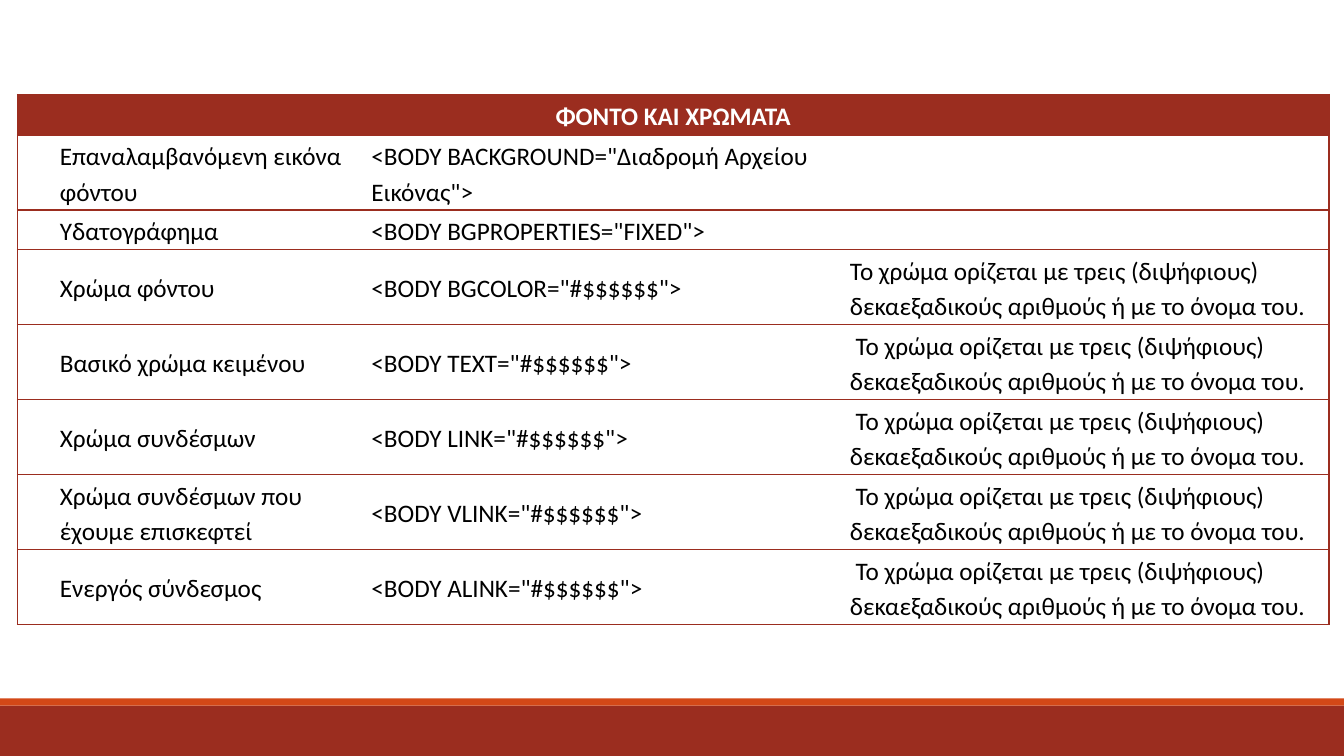
"""Build a slide with a table of HTML background and colour tags."""
from lxml import etree
from pptx import Presentation
from pptx.dml.color import RGBColor
from pptx.enum import shapes, text
from pptx.oxml import ns
from pptx.util import Cm, Pt

COLOURS = {"brick": "9B2D1F", "orange": "D34817", "white": "FFFFFF", "black": "000000"}
HEADING = "ΦΟΝΤΟ ΚΑΙ ΧΡΩΜΑΤΑ"
COLOUR_NOTE = "Το χρώμα ορίζεται με τρεις (διψήφιους) δεκαεξαδικούς αριθμούς ή με το όνομα του."
INDENTED_NOTE = " " + COLOUR_NOTE
TAGS = [
    ("Επαναλαμβανόμενη εικόνα φόντου", '<BODY BACKGROUND="Διαδρομή Αρχείου Εικόνας">', ""),
    ("Υδατογράφημα", '<BODY BGPROPERTIES="FIXED">', ""),
    ("Χρώμα φόντου", '<BODY BGCOLOR="#$$$$$$">', COLOUR_NOTE),
    ("Βασικό χρώμα κειμένου", '<BODY TEXT="#$$$$$$">', INDENTED_NOTE),
    ("Χρώμα συνδέσμων", '<BODY LINK="#$$$$$$">', INDENTED_NOTE),
    ("Χρώμα συνδέσμων που έχουμε επισκεφτεί", '<BODY VLINK="#$$$$$$">', INDENTED_NOTE),
    ("Ενεργός σύνδεσμος", '<BODY ALINK="#$$$$$$">', INDENTED_NOTE),
]
COLUMN_WIDTHS = [1.02, 7.85, 12.06, 12.12]
ROW_HEIGHTS = [1.02, 1.89, 0.99] + [1.89] * 5


def colour(name):
    return RGBColor.from_string(COLOURS[name])


def add_band(slide, top, width, height, fill):
    band = slide.shapes.add_shape(shapes.MSO_SHAPE.RECTANGLE, 0, Cm(top), width, Cm(height))
    band.shadow.inherit = False
    band.fill.solid()
    band.fill.fore_color.rgb = colour(fill)
    band.line.fill.background()


def set_borders(cell, visible):
    properties = cell._tc.get_or_add_tcPr()
    for position, side in enumerate("LRTB"):
        border = etree.Element(ns.qn(f"a:ln{side}"), w=str(Pt(1)))
        if side in visible:
            fill = etree.SubElement(border, ns.qn("a:solidFill"))
            etree.SubElement(fill, ns.qn("a:srgbClr"), val=COLOURS["brick"])
        else:
            etree.SubElement(border, ns.qn("a:noFill"))
        properties.insert(position, border)


def fill_cell(cell, wording, is_heading):
    cell.margin_left = cell.margin_right = Cm(0.05)
    cell.margin_top = cell.margin_bottom = Cm(0.05)
    cell.vertical_anchor = text.MSO_ANCHOR.MIDDLE
    if is_heading:
        cell.fill.solid()
        cell.fill.fore_color.rgb = colour("brick")
    else:
        cell.fill.background()
    cell.text = wording
    paragraph = cell.text_frame.paragraphs[0]
    paragraph.alignment = text.PP_ALIGN.CENTER if is_heading else text.PP_ALIGN.LEFT
    paragraph.line_spacing = 1.15
    paragraph.space_after = Pt(10)
    paragraph.font.name = "Calibri"
    paragraph.font.size = Pt(18)
    paragraph.font.bold = is_heading
    paragraph.font.color.rgb = colour("white" if is_heading else "black")


def add_tag_table(slide):
    rows = [(HEADING, "", "", "")] + [("", *tag) for tag in TAGS]
    tag_table = slide.shapes.add_table(
        len(rows), len(COLUMN_WIDTHS), Cm(0.44), Cm(2.38),
        Cm(sum(COLUMN_WIDTHS)), Cm(sum(ROW_HEIGHTS))).table
    tag_table.horz_banding = False
    for column, width in zip(tag_table.columns, COLUMN_WIDTHS):
        column.width = Cm(width)
    last_column = len(COLUMN_WIDTHS) - 1
    for row_index, wordings in enumerate(rows):
        tag_table.rows[row_index].height = Cm(ROW_HEIGHTS[row_index])
        for column_index, wording in enumerate(wordings):
            cell = tag_table.cell(row_index, column_index)
            outer_sides = {0: "L", last_column: "R"}.get(column_index, "")
            fill_cell(cell, wording, row_index == 0)
            set_borders(cell, "TB" + outer_sides)
    tag_table.cell(0, 0).merge(tag_table.cell(0, last_column))
    set_heading_edge = tag_table.cell(0, 0)._tc.tcPr.find(ns.qn("a:lnR"))
    set_heading_edge.getparent().replace(
        set_heading_edge, etree.fromstring(etree.tostring(
            tag_table.cell(0, last_column)._tc.tcPr.find(ns.qn("a:lnR")))))


def main():
    presentation = Presentation()
    presentation.slide_width = Cm(33.87)
    presentation.slide_height = Cm(19.05)
    slide = presentation.slides.add_slide(presentation.slide_layouts[6])
    add_band(slide, 17.78, presentation.slide_width, 1.27, "brick")
    add_band(slide, 17.6, presentation.slide_width, 0.18, "orange")
    add_tag_table(slide)
    presentation.save("out.pptx")


if __name__ == "__main__":
    main()
